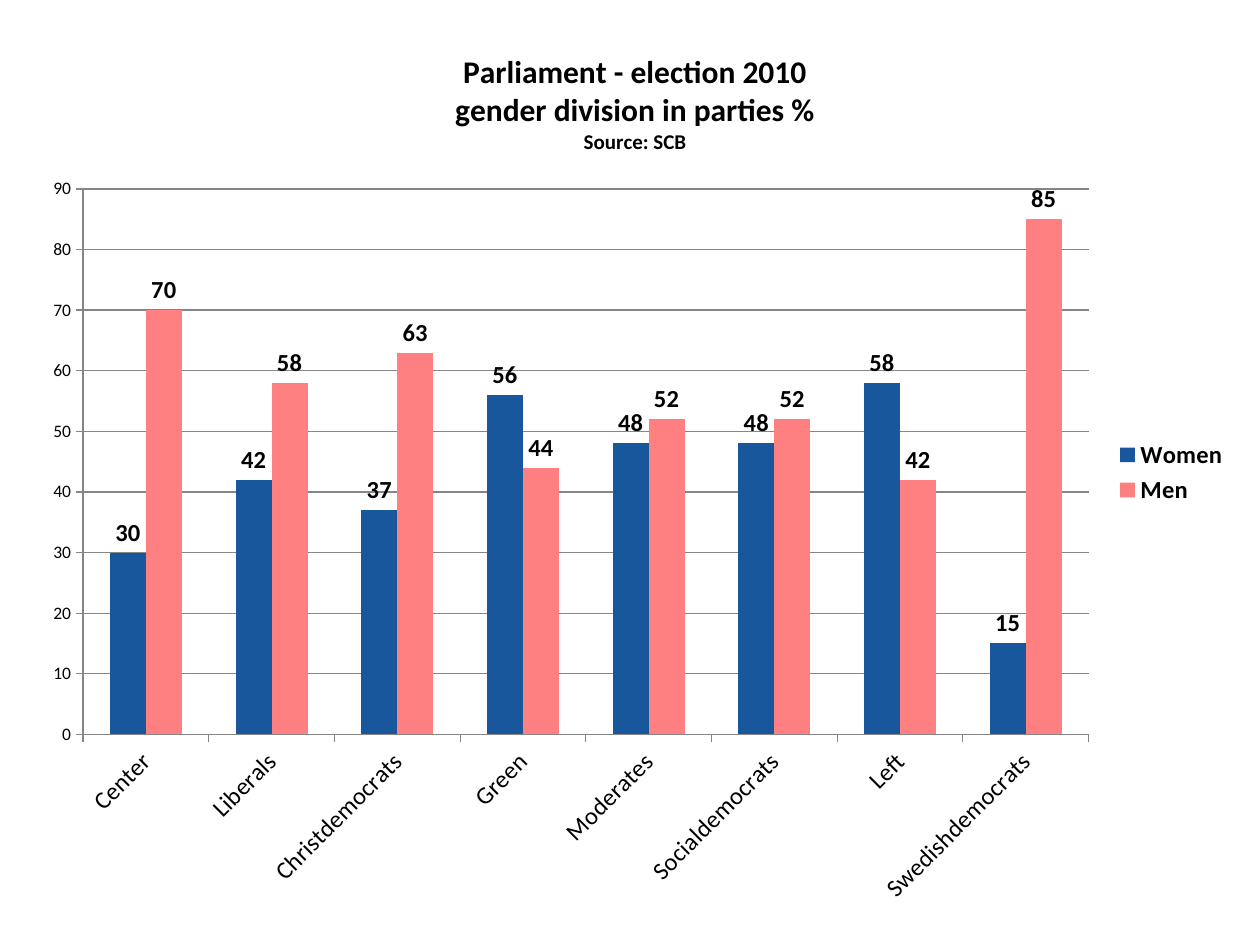
from lxml.etree import fromstring
from pptx import Presentation
from pptx.chart.data import CategoryChartData
from pptx.dml.color import RGBColor
from pptx.enum.chart import XL_CHART_TYPE, XL_LABEL_POSITION, XL_LEGEND_POSITION, XL_TICK_MARK
from pptx.oxml.ns import qn
from pptx.util import Inches, Pt

COLORS = {"Women": "18579B", "Men": "FF8080", "text": "000000", "line": "868686"}
TITLE = [
    ("Parliament - election 2010", 18),
    ("gender division in parties %", 18),
    ("Source: SCB", 12),
]
PARTIES = ["Center", "Liberals", "Christdemocrats", "Green", "Moderates",
           "Socialdemocrats", "Left", "Swedishdemocrats"]
SHARES = {
    "Women": [30, 42, 37, 56, 48, 48, 58, 15],
    "Men": [70, 58, 63, 44, 52, 52, 42, 85],
}
CHART = {"x": 0.23, "y": 0.18, "w": 9.62, "h": 7.14}
PLOT = {"x": 0.66, "y": 1.5, "w": 7.98, "h": 4.33}


def rgb(name):
    return RGBColor.from_string(COLORS[name])


def set_font(font, size, bold=False):
    values = {"name": "Calibri", "size": Pt(size), "bold": bold}
    for key, value in values.items():
        setattr(font, key, value)
    font.color.rgb = rgb("text")


def set_line(line):
    line.color.rgb = rgb("line")
    line.width = Pt(0.75)


def place_plot(chart):
    fractions = {
        "x": (PLOT["x"] - CHART["x"]) / CHART["w"],
        "y": (PLOT["y"] - CHART["y"]) / CHART["h"],
        "w": PLOT["w"] / CHART["w"],
        "h": PLOT["h"] / CHART["h"],
    }
    parts = "".join(f'<c:{k} val="{v:.4f}"/>' for k, v in fractions.items())
    layout = fromstring(
        '<c:layout xmlns:c="http://schemas.openxmlformats.org/drawingml/2006/chart">'
        '<c:manualLayout><c:layoutTarget val="inner"/>'
        '<c:xMode val="edge"/><c:yMode val="edge"/>'
        f"{parts}</c:manualLayout></c:layout>"
    )
    area = chart.element.find(".//" + qn("c:plotArea"))
    for old in area.findall(qn("c:layout")):
        area.remove(old)
    area.insert(0, layout)


def main():
    prs = Presentation()
    prs.slide_width, prs.slide_height = Inches(10), Inches(7.5)
    s = prs.slides.add_slide(prs.slide_layouts[6])

    data = CategoryChartData()
    data.categories = PARTIES
    for name, values in SHARES.items():
        data.add_series(name, values)
    box = [Inches(CHART[k]) for k in "xywh"]
    chart = s.shapes.add_chart(XL_CHART_TYPE.COLUMN_CLUSTERED, *box, data).chart
    set_font(chart.font, 10)
    place_plot(chart)

    chart.has_title = True
    tf = chart.chart_title.text_frame
    for i, (text, size) in enumerate(TITLE):
        p = tf.paragraphs[0] if i == 0 else tf.add_paragraph()
        r = p.add_run()
        r.text = text
        set_font(r.font, size, True)

    chart.has_legend = True
    chart.legend.position = XL_LEGEND_POSITION.RIGHT
    chart.legend.include_in_layout = False
    set_font(chart.legend.font, 14, True)

    for axis, size in ((chart.category_axis, 14), (chart.value_axis, 10)):
        axis.major_tick_mark = XL_TICK_MARK.OUTSIDE
        set_font(axis.tick_labels.font, size)
        set_line(axis.format.line)
    category_axis = chart.element.find(".//" + qn("c:catAx"))
    body = category_axis.find(qn("c:txPr")).find(qn("a:bodyPr"))
    body.set("rot", "-2700000")
    body.set("vert", "horz")

    value_axis = chart.value_axis
    value_axis.minimum_scale, value_axis.maximum_scale = 0, 90
    value_axis.major_unit = 10
    value_axis.has_major_gridlines = True
    set_line(value_axis.major_gridlines.format.line)

    plot = chart.plots[0]
    plot.gap_width, plot.overlap = 150, 0
    plot.vary_by_categories = False
    for series in plot.series:
        series.format.fill.solid()
        series.format.fill.fore_color.rgb = rgb(series.name)
        labels = series.data_labels
        labels.show_value = True
        labels.position = XL_LABEL_POSITION.OUTSIDE_END
        set_font(labels.font, 14, True)

    prs.save("out.pptx")


if __name__ == "__main__":
    main()
